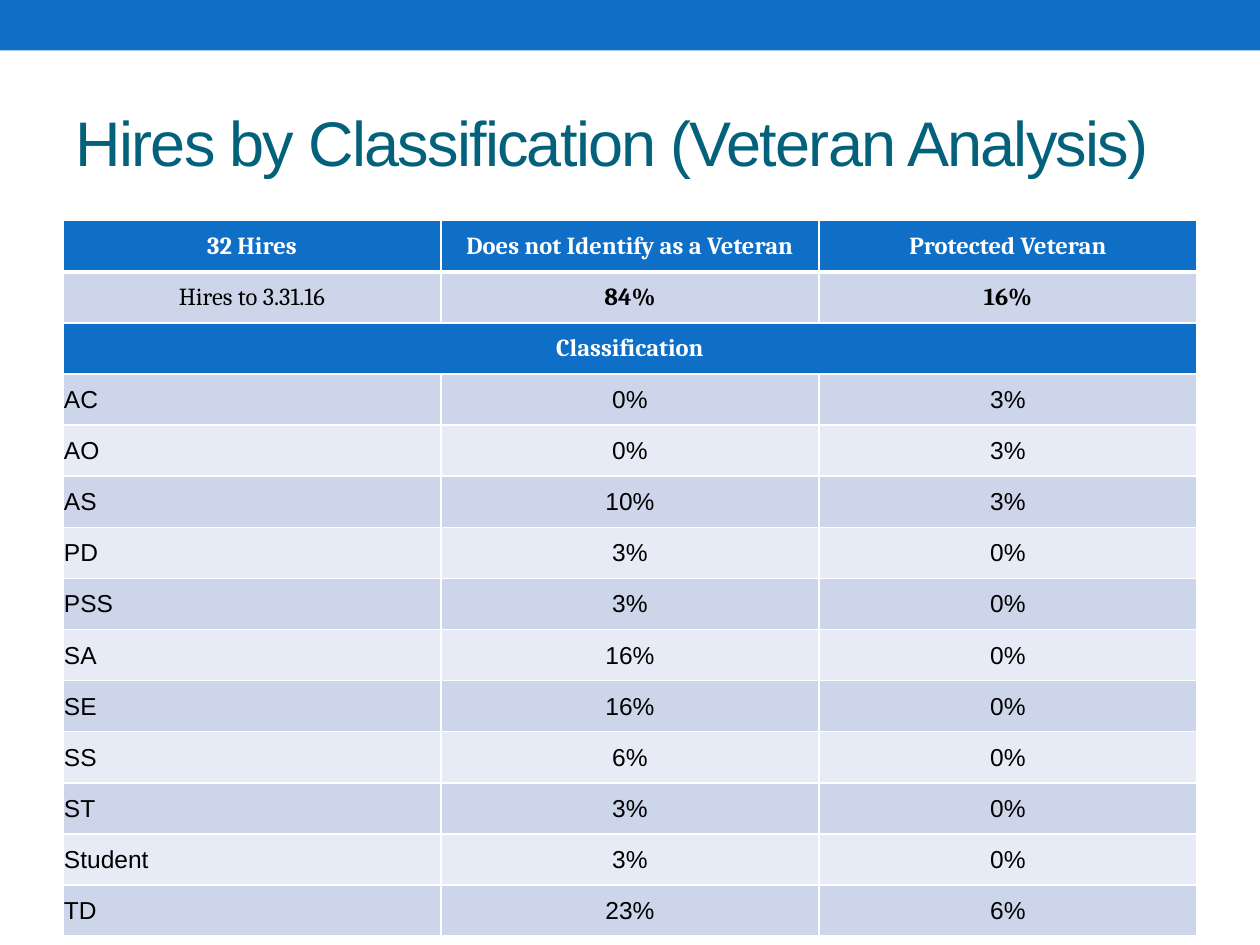
"""Build the veteran analysis slide of hires by classification."""
from dataclasses import dataclass

from lxml.etree import SubElement
from pptx import Presentation
from pptx.dml.color import RGBColor
from pptx.enum.shapes import MSO_SHAPE
from pptx.enum.text import MSO_ANCHOR, MSO_AUTO_SIZE, PP_ALIGN
from pptx.oxml.ns import qn
from pptx.table import Table, _Cell as Cell
from pptx.util import Cm, Pt

BLUE, TEAL, WHITE, BLACK = "0F6FC6", "04617B", "FFFFFF", "000000"
BANDS = ("CCD5EA", "E7EBF5")
COLUMN_WIDTH, ROW_HEIGHT = Cm(7.62), Cm(1.03)


@dataclass(frozen=True)
class CellStyle:
    """Describe the look of a table cell."""
    fill: str
    color: str = BLACK
    font: str = "Cambria"
    bold: bool = False
    align: PP_ALIGN = PP_ALIGN.CENTER
    tight: bool = False
    bottom: float = 1


@dataclass(frozen=True)
class Classification:
    """Hold the hire shares of one classification."""
    name: str
    other: int
    veteran: int


CLASSIFICATIONS = [
    Classification("AC", 0, 3),
    Classification("AO", 0, 3),
    Classification("AS", 10, 3),
    Classification("PD", 3, 0),
    Classification("PSS", 3, 0),
    Classification("SA", 16, 0),
    Classification("SE", 16, 0),
    Classification("SS", 6, 0),
    Classification("ST", 3, 0),
    Classification("Student", 3, 0),
    Classification("TD", 23, 6),
]


def rgb(value: str) -> RGBColor:
    """Turn a hex string into a colour."""
    return RGBColor.from_string(value)


def draw_borders(cell: Cell, bottom: float) -> None:
    """Give a cell white borders."""
    properties = cell._tc.get_or_add_tcPr()
    for side, width in (("L", 1), ("R", 1), ("T", 1), ("B", bottom)):
        line = SubElement(properties, qn(f"a:ln{side}"), w=str(Pt(width)))
        fill = SubElement(line, qn("a:solidFill"))
        SubElement(fill, qn("a:srgbClr"), val=WHITE)


def fill_cell(cell: Cell, text: str, style: CellStyle) -> None:
    """Write and format one cell."""
    draw_borders(cell, style.bottom)
    cell.fill.solid()
    cell.fill.fore_color.rgb = rgb(style.fill)
    cell.vertical_anchor = MSO_ANCHOR.MIDDLE
    if style.tight:
        cell.margin_left = cell.margin_right = cell.margin_top = Cm(0.02)
        cell.margin_bottom = 0
    cell.text = text
    para = cell.text_frame.paragraphs[0]
    para.alignment = style.align
    para.font.name, para.font.size = style.font, Pt(14)
    para.font.bold = style.bold
    para.font.color.rgb = rgb(style.color)


def fill_row(table: Table, row: int, texts: list[str], styles: list[CellStyle]) -> None:
    """Write one row of cells."""
    for column, (text, style) in enumerate(zip(texts, styles)):
        fill_cell(table.cell(row, column), text, style)


def add_band(slide) -> None:
    """Draw the blue band along the top edge."""
    band = slide.shapes.add_shape(MSO_SHAPE.RECTANGLE, 0, 0, Cm(25.4), Cm(1.02))
    band.shadow.inherit = False
    band.fill.solid()
    band.fill.fore_color.rgb = rgb(BLUE)
    band.line.fill.background()


def add_title(slide, text: str) -> None:
    """Place and format the slide title."""
    title = slide.shapes.title
    title.left, title.top, title.width, title.height = Cm(1.27), Cm(1.47), Cm(22.86), Cm(2.74)
    frame = title.text_frame
    frame.text = text
    frame.word_wrap = True
    frame.auto_size = MSO_AUTO_SIZE.NONE
    frame.vertical_anchor = MSO_ANCHOR.MIDDLE
    para = frame.paragraphs[0]
    para.alignment = PP_ALIGN.LEFT
    para.font.name, para.font.size = "Arial", Pt(36)
    para.font.color.rgb = rgb(TEAL)
    para.runs[0].font._element.set("spc", "-100")


def add_hires_table(slide) -> None:
    """Add the table of hires."""
    rows = len(CLASSIFICATIONS) + 3
    table = slide.shapes.add_table(
        rows, 3, Cm(1.27), Cm(4.45), 3 * COLUMN_WIDTH, rows * ROW_HEIGHT
    ).table
    for column in table.columns:
        column.width = COLUMN_WIDTH
    for row in table.rows:
        row.height = ROW_HEIGHT

    header = CellStyle(BLUE, WHITE, bold=True, bottom=3)
    fill_row(table, 0, ["32 Hires", "Does not Identify as a Veteran", "Protected Veteran"], [header] * 3)
    total = CellStyle(BANDS[0], bold=True)
    fill_row(table, 1, ["Hires to 3.31.16", "84%", "16%"], [CellStyle(BANDS[0]), total, total])
    table.cell(2, 0).merge(table.cell(2, 2))
    fill_row(table, 2, ["Classification", "", ""], [CellStyle(BLUE, WHITE, bold=True)] * 3)

    for index, item in enumerate(CLASSIFICATIONS):
        band = BANDS[index % 2]
        label = CellStyle(band, font="Arial", align=PP_ALIGN.LEFT, tight=True)
        share = CellStyle(band, font="Arial", tight=True)
        texts = [item.name, f"{item.other}%", f"{item.veteran}%"]
        fill_row(table, index + 3, texts, [label, share, share])


def main() -> None:
    """Build and save the deck."""
    deck = Presentation()
    deck.slide_width, deck.slide_height = Cm(25.4), Cm(19.05)
    slide = deck.slides.add_slide(deck.slide_layouts[5])
    add_band(slide)
    add_title(slide, "Hires by Classification (Veteran Analysis)")
    add_hires_table(slide)
    deck.save("out.pptx")


if __name__ == "__main__":
    main()
